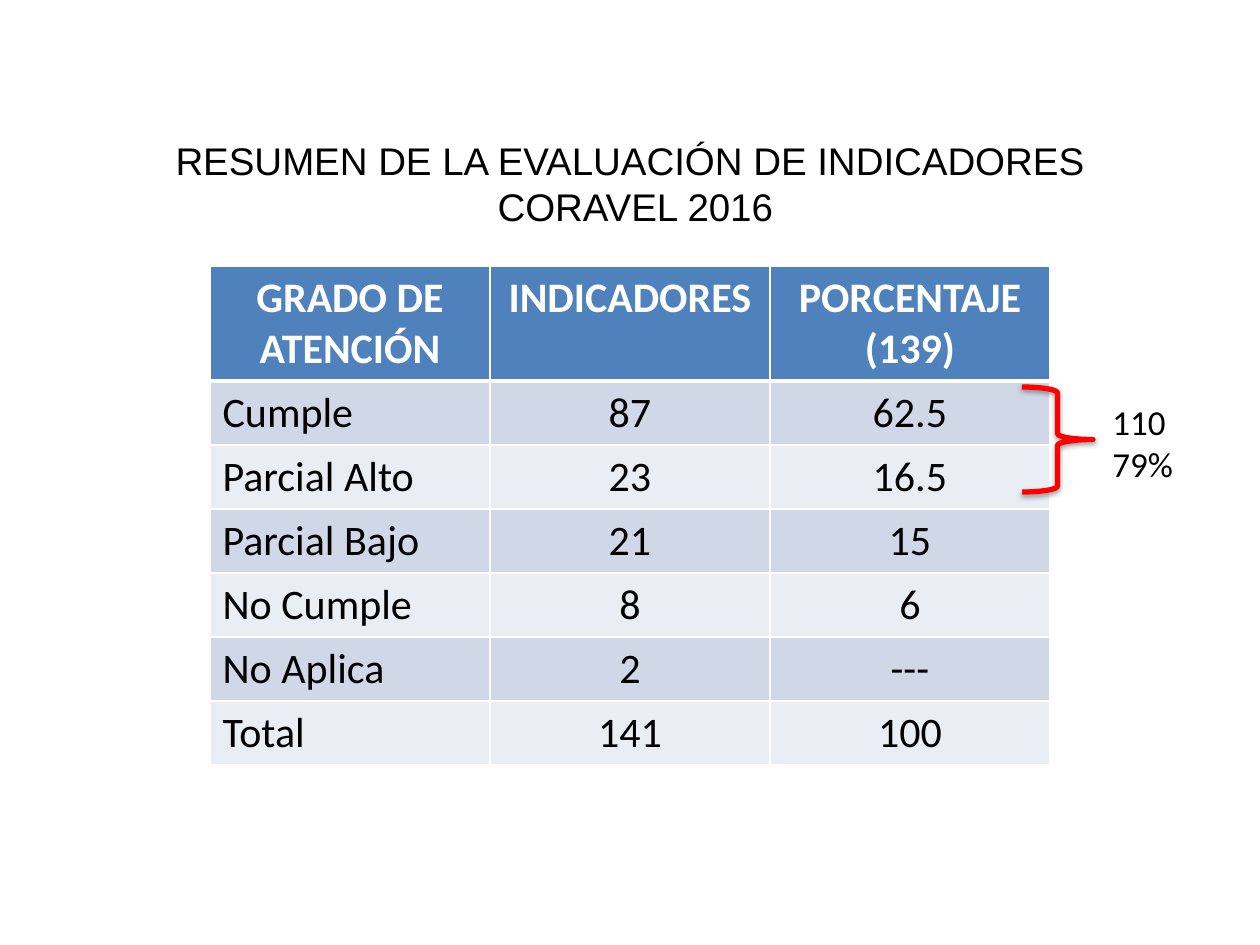
"""Build the slide that sums up the 2016 indicator evaluation."""
import pptx
import pptx.dml.color
import pptx.enum.shapes
import pptx.enum.text
import pptx.oxml
import pptx.oxml.ns
import pptx.util

RGBColor = pptx.dml.color.RGBColor
PP_ALIGN = pptx.enum.text.PP_ALIGN
MSO_ANCHOR = pptx.enum.text.MSO_ANCHOR
MSO_AUTO_SIZE = pptx.enum.text.MSO_AUTO_SIZE

WHITE = RGBColor(0xFF, 0xFF, 0xFF)
BLACK = RGBColor(0x00, 0x00, 0x00)
RED = RGBColor(0xFF, 0x00, 0x00)
HEADER_BLUE = RGBColor(0x4F, 0x81, 0xBD)
BANDS = (RGBColor(0xD0, 0xD8, 0xE8), RGBColor(0xE9, 0xED, 0xF4))

PX_PER_INCH = 126
HEADER_HEIGHT, ROW_HEIGHT, COLUMN_WIDTH = 115, 64, 280

TITLE = "RESUMEN DE LA EVALUACIÓN DE INDICADORES\n CORAVEL 2016"
ROWS = (
    ("GRADO DE ATENCIÓN", "INDICADORES", "PORCENTAJE (139)"),
    ("Cumple", "87", "62.5"),
    ("Parcial Alto", "23", "16.5"),
    ("Parcial Bajo", "21", "15"),
    ("No Cumple", "8", "6"),
    ("No Aplica", "2", "---"),
    ("Total", "141", "100"),
)


def px(n):
    """Turn slide pixels into EMU."""
    return pptx.util.Emu(round(n * 914400 / PX_PER_INCH))


def place(sp, left, top, width, height):
    """Set the position and size of a shape."""
    sp.left, sp.top, sp.width, sp.height = map(px, (left, top, width, height))


def write(tf, text, font, size, color=BLACK, align=PP_ALIGN.LEFT, bold=False):
    """Fill a text frame and format every run."""
    tf.text = text
    for p in tf.paragraphs:
        p.alignment = align
        for r in p.runs:
            r.font.name = font
            r.font.size = pptx.util.Pt(size)
            r.font.bold = bold
            r.font.color.rgb = color


def add_title(s):
    """Move and format the title placeholder."""
    sp = s.shapes.title
    place(sp, 0, 131, 1260, 106)
    tf = sp.text_frame
    write(tf, TITLE, "Arial", 22, align=PP_ALIGN.CENTER)
    tf.word_wrap = True
    tf.vertical_anchor = MSO_ANCHOR.TOP
    tf.auto_size = MSO_AUTO_SIZE.SHAPE_TO_FIT_TEXT


def set_borders(cell, top, bottom):
    """Draw white cell borders with the given top and bottom widths in points."""
    tc_pr = cell._tc.get_or_add_tcPr()
    sides = (("L", 1), ("R", 1), ("T", top), ("B", bottom))
    for i, (side, width) in enumerate(sides):
        tc_pr.insert(i, pptx.oxml.parse_xml(
            f'<a:ln{side} {pptx.oxml.ns.nsdecls("a")} w="{pptx.util.Pt(width)}">'
            f'<a:solidFill><a:srgbClr val="{WHITE}"/></a:solidFill></a:ln{side}>'))


def add_summary_table(s, left, top):
    """Add the banded table of indicators by degree of attention."""
    heights = [HEADER_HEIGHT] + [ROW_HEIGHT] * (len(ROWS) - 1)
    columns = len(ROWS[0])
    frame = s.shapes.add_table(len(ROWS), columns, px(left), px(top),
                               px(COLUMN_WIDTH * columns), px(sum(heights)))
    table = frame.table
    for column in table.columns:
        column.width = px(COLUMN_WIDTH)
    for i, values in enumerate(ROWS):
        table.rows[i].height = px(heights[i])
        header = i == 0
        for j, value in enumerate(values):
            cell = table.cell(i, j)
            cell.fill.solid()
            cell.fill.fore_color.rgb = HEADER_BLUE if header else BANDS[(i - 1) % 2]
            set_borders(cell, 3 if i == 1 else 1, 3 if header else 1)
            write(cell.text_frame, value, "Calibri", 24,
                  WHITE if header else BLACK,
                  PP_ALIGN.CENTER if header or j else PP_ALIGN.LEFT, header)


def add_label(s, text, left, top, width, height):
    """Add an unwrapped text box."""
    sp = s.shapes.add_textbox(*map(px, (left, top, width, height)))
    tf = sp.text_frame
    write(tf, text, "Calibri", 20)
    tf.word_wrap = False
    tf.auto_size = MSO_AUTO_SIZE.SHAPE_TO_FIT_TEXT


def add_brace(s, left, top, width, height):
    """Add a red brace with a soft shadow that points to the right."""
    sp = s.shapes.add_shape(pptx.enum.shapes.MSO_SHAPE.LEFT_BRACE,
                            *map(px, (left, top, width, height)))
    sp.rotation = 180
    sp.fill.background()
    sp.line.color.rgb = RED
    sp.line.width = pptx.util.Pt(3)
    sp.shadow.inherit = False
    effects = sp._element.spPr.find(pptx.oxml.ns.qn("a:effectLst"))
    effects.append(pptx.oxml.parse_xml(
        f'<a:outerShdw {pptx.oxml.ns.nsdecls("a")} blurRad="40000" dist="20000" '
        f'dir="5400000" rotWithShape="0"><a:srgbClr val="{BLACK}">'
        '<a:alpha val="38000"/></a:srgbClr></a:outerShdw>'))


def main():
    """Build and save the presentation."""
    prs = pptx.Presentation()
    prs.slide_width, prs.slide_height = px(1260), px(945)
    s = prs.slides.add_slide(prs.slide_layouts[5])
    add_summary_table(s, 210, 266)
    add_title(s)
    add_label(s, "110\n79%", 1100, 394, 87, 97)
    add_brace(s, 1022, 387, 71, 105)
    prs.save("out.pptx")


if __name__ == "__main__":
    main()
